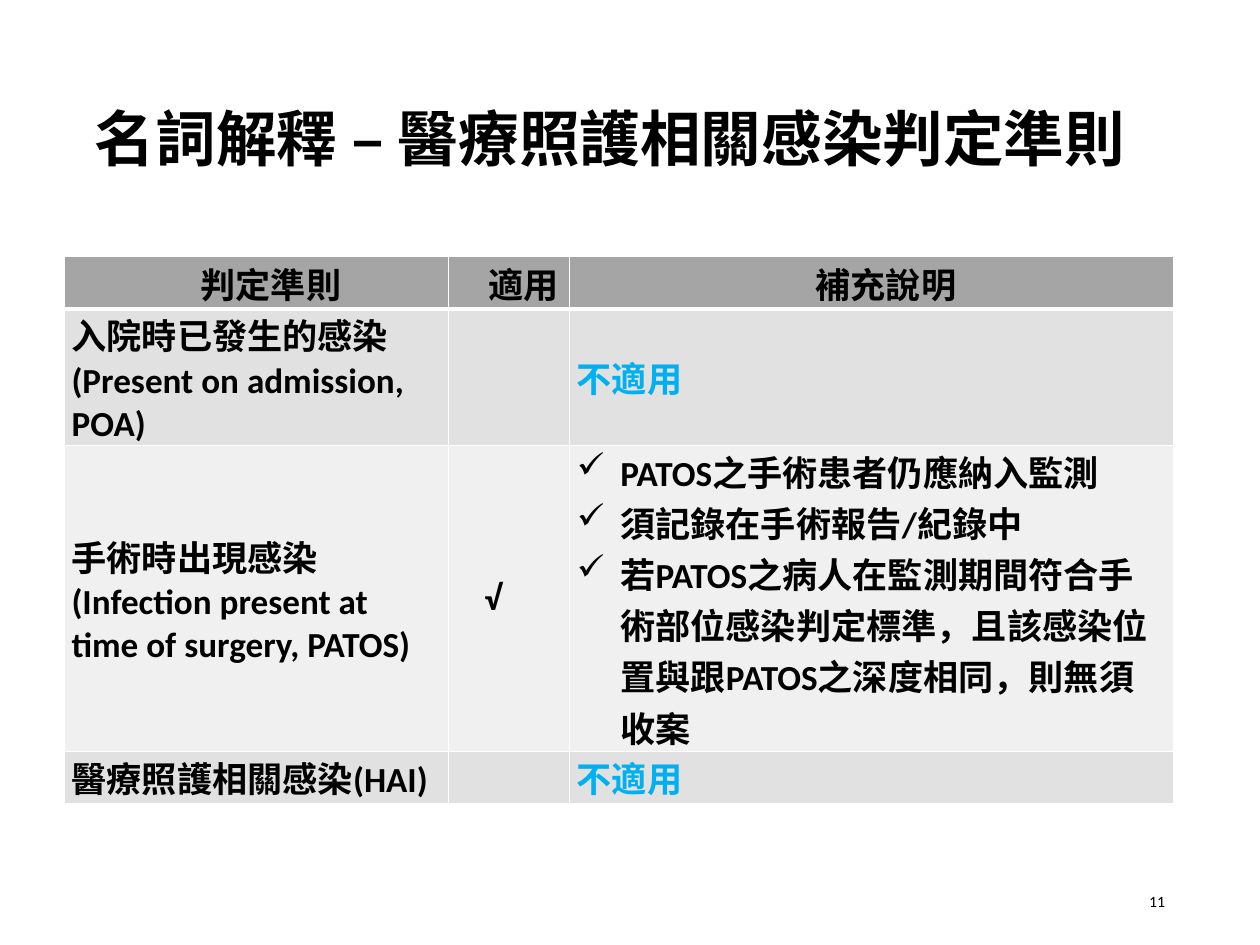
from lxml import etree
from pptx import Presentation
from pptx import util as u
from pptx.dml.color import RGBColor
from pptx.enum import text
from pptx.oxml.ns import qn

COLORS = {"ink": "000000", "accent": "00B0F0", "white": "FFFFFF",
          "header": "A5A5A5", "odd": "E1E1E1", "even": "F0F0F0"}
LEFT, CENTER, RIGHT = text.PP_ALIGN.LEFT, text.PP_ALIGN.CENTER, text.PP_ALIGN.RIGHT

presentation = Presentation()
presentation.slide_width, presentation.slide_height = u.Inches(14.44), u.Inches(10.83)
slide = presentation.slides.add_slide(presentation.slide_layouts[6])


def write(paragraph, words, size, bold=True, color="ink", align=LEFT):
    paragraph.alignment = align
    run = paragraph.add_run()
    run.text = words
    formats = {"name": "Calibri", "size": u.Pt(size), "bold": bold}
    for name, value in formats.items():
        setattr(run.font, name, value)
    run.font.color.rgb = RGBColor.from_string(COLORS[color])


def add_border(properties, position, side, points):
    line = etree.Element(qn(f"a:ln{side}"), w=str(u.Pt(points)))
    fill = etree.SubElement(line, qn("a:solidFill"))
    etree.SubElement(fill, qn("a:srgbClr"), val=COLORS["white"])
    properties.insert(position, line)


# Title and slide number
text_boxes = [
    ((0.99, 0.58, 12.46, 2.09), "名詞解釋 – 醫療照護相關感染判定準則", 50, True, LEFT, 0.9),
    ((10.2, 10.04, 3.25, 0.58), "11", 13, False, RIGHT, 1.0),
]
for place, words, size, bold, align, spacing in text_boxes:
    frame = slide.shapes.add_textbox(*map(u.Inches, place)).text_frame
    frame.word_wrap = True
    frame.vertical_anchor = text.MSO_ANCHOR.MIDDLE
    frame.paragraphs[0].line_spacing = spacing
    write(frame.paragraphs[0], words, size, bold, align=align)

# Table content: each cell is a list of paragraphs
rows = [
    [["判定準則"], ["適用"], ["補充說明"]],
    [["入院時已發生的感染(Present on admission, POA)"], [], ["不適用"]],
    [["手術時出現感染 (Infection present at time of surgery, PATOS)"], ["√"],
     ["PATOS之手術患者仍應納入監測",
      "須記錄在手術報告/紀錄中",
      "若PATOS之病人在監測期間符合手術部位感染判定標準，且該感染位置與跟PATOS之深度相同，則無須收案"]],
    [["醫療照護相關感染(HAI)"], [], ["不適用"]],
]
column_widths = [4.4, 1.39, 6.92]
row_heights = [0.6, 1.57, 3.5, 0.6]
row_fills = ["header", "odd", "even", "odd"]

table = slide.shapes.add_table(
    len(rows), len(column_widths), u.Inches(0.74), u.Inches(2.94),
    u.Inches(sum(column_widths)), u.Inches(sum(row_heights))).table
for column, width in zip(table.columns, column_widths):
    column.width = u.Inches(width)
for row, height in zip(table.rows, row_heights):
    row.height = u.Inches(height)

# Cells
for r, row in enumerate(rows):
    for c, lines in enumerate(row):
        cell = table.cell(r, c)
        cell_format = {"margin_left": u.Inches(0.08), "margin_right": u.Inches(0.08),
                       "margin_top": 0, "margin_bottom": 0,
                       "vertical_anchor": text.MSO_ANCHOR.MIDDLE}
        for name, value in cell_format.items():
            setattr(cell, name, value)
        cell.fill.solid()
        cell.fill.fore_color.rgb = RGBColor.from_string(COLORS[row_fills[r]])
        for position, side in enumerate("LRTB"):
            thick = (r, side) in [(0, "B"), (1, "T")]
            add_border(cell._tc.get_or_add_tcPr(), position, side, 3 if thick else 1)

        frame = cell.text_frame
        for i, words in enumerate(lines):
            paragraph = frame.add_paragraph() if i else frame.paragraphs[0]
            write(paragraph, words, 29,
                  color="accent" if words == "不適用" else "ink",
                  align=CENTER if r == 0 else LEFT)
            properties = paragraph._p.get_or_add_pPr()
            if len(lines) > 1:  # check-marked list
                properties.set("marL", str(u.Inches(0.5)))
                properties.set("indent", str(-u.Inches(0.5)))
                etree.SubElement(properties, qn("a:buChar"), char="✓")
            elif r == 0 or words == "√":
                properties.set("indent", str(u.Inches(0.33)))

presentation.save("out.pptx")
